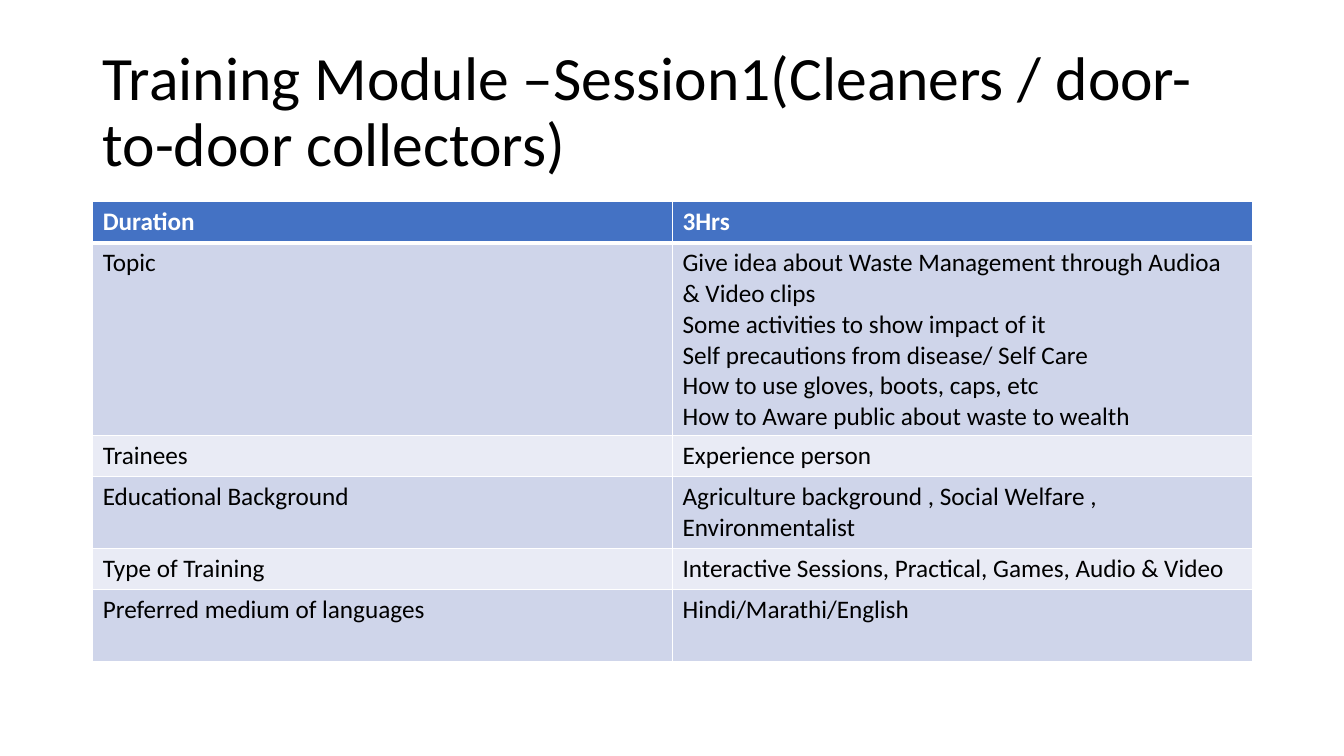
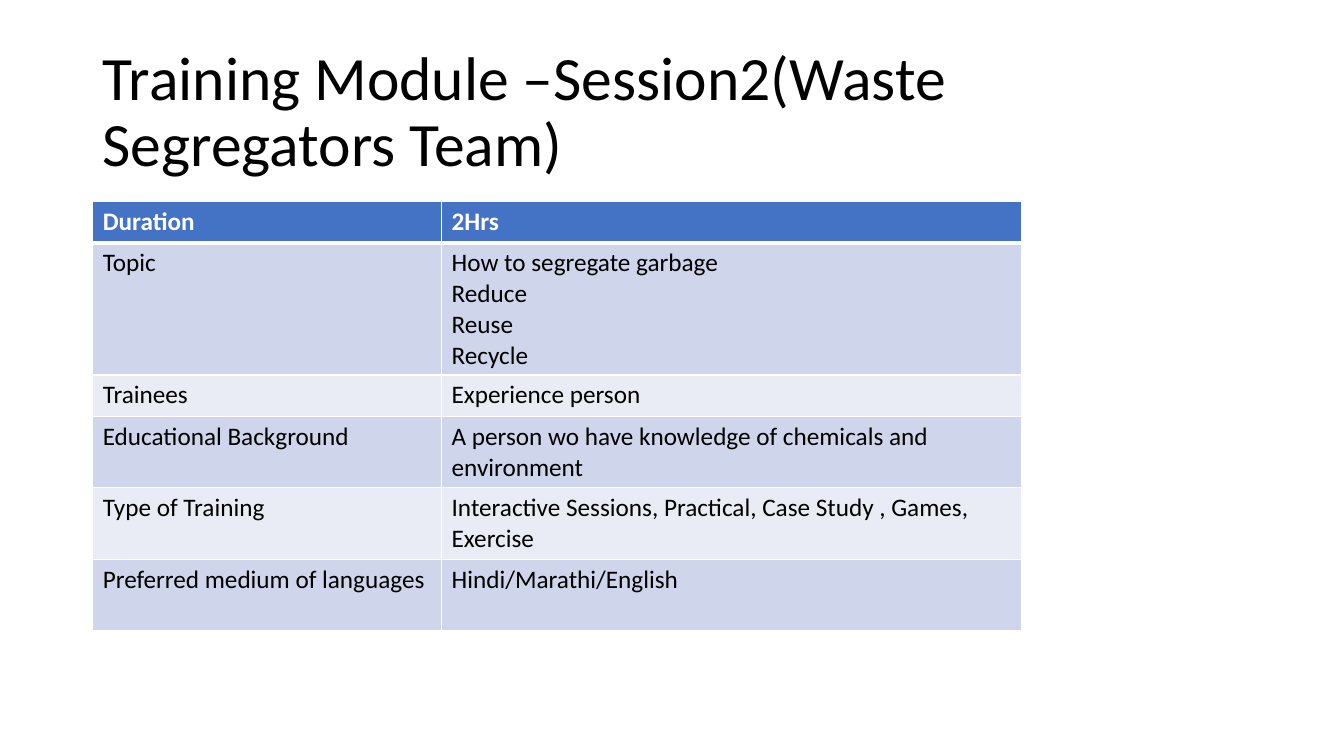
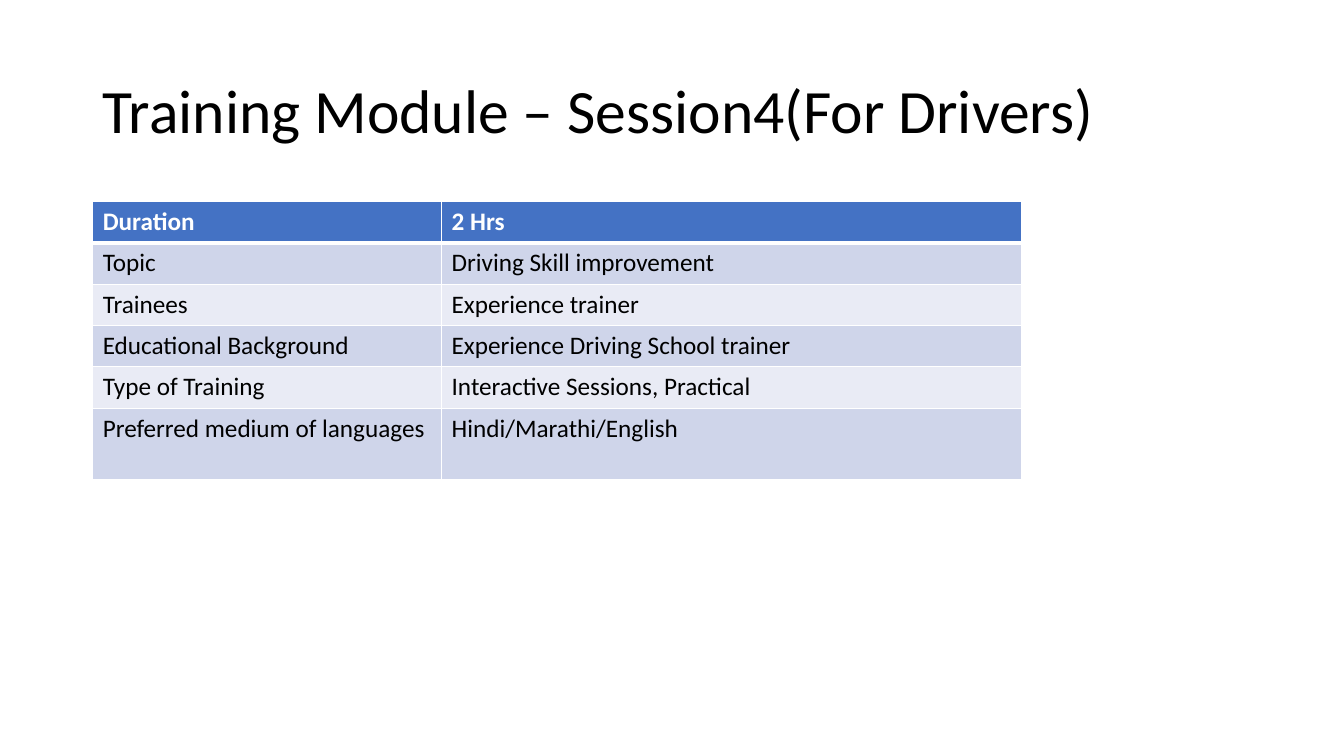
from lxml.etree import SubElement
from pptx import Presentation
from pptx.dml.color import RGBColor
from pptx.enum.text import MSO_ANCHOR as Anchor
from pptx.oxml.ns import qn
from pptx.util import Inches, Pt

# Shared style
FONT = "Calibri"
WHITE, BLACK, BLUE = "FFFFFF", "000000", "4472C4"
BANDS = ("CFD5EA", "E9EBF5")
TITLE_BOX = (0.92, 0.4, 11.5, 1.45)
TABLE_AT = (0.92, 2)
ROW, LINE = 0.41, 0.3
LABELS = ("Duration", "Topic", "Trainees", "Educational Background",
          "Type of Training", "Preferred medium of languages")
TONGUES = "Hindi/Marathi/English"

# Per slide: title, column widths, text lines per row, one value per label
SESSIONS = (
    ("Training Module –Session1(Cleaners / door-to-door collectors)",
     (5.75, 5.75), (1, 6, 1, 2, 1, 2),
     ("3Hrs",
      "Give idea about Waste Management through Audioa & Video clips\n"
      "Some activities to show impact of it\n"
      "Self precautions from disease/ Self Care\n"
      "How to use gloves, boots, caps, etc\n"
      "How to Aware public about waste to wealth",
      "Experience person",
      "Agriculture background , Social Welfare , Environmentalist",
      "Interactive Sessions, Practical, Games, Audio & Video",
      TONGUES)),
    ("Training Module –Session2(Waste Segregators Team)",
     (3.46, 5.75), (1, 4, 1, 2, 2, 2),
     ("2Hrs",
      "How to segregate garbage\nReduce\nReuse\nRecycle",
      "Experience person",
      "A person wo have knowledge of chemicals and environment",
      "Interactive Sessions, Practical, Case Study , Games, Exercise",
      TONGUES)),
    ("Training Module – Session4(For Drivers)",
     (3.46, 5.75), (1, 1, 1, 1, 1, 2),
     ("2 Hrs",
      "Driving Skill improvement",
      "Experience trainer",
      "Experience Driving School trainer",
      "Interactive Sessions, Practical",
      TONGUES)),
)


def color(code):
    return RGBColor.from_string(code)


def write(frame, text, size, ink, bold=False, space=None):
    for i, line in enumerate(text.split("\n")):
        para = frame.add_paragraph() if i else frame.paragraphs[0]
        para.line_spacing = space
        run = para.add_run()
        run.text = line
        font = run.font
        font.name, font.size, font.bold = FONT, Pt(size), bold
        font.color.rgb = color(ink)


def add_title(slide, box, text):
    frame = slide.shapes.add_textbox(*map(Inches, box)).text_frame
    frame.word_wrap = True
    frame.vertical_anchor = Anchor.MIDDLE
    write(frame, text, 44, BLACK, space=0.9)


def set_edges(cell, top, bottom):
    # Borders come before the fill in the cell properties
    props = cell._tc.get_or_add_tcPr()
    widths = (("L", 1), ("R", 1), ("T", top), ("B", bottom))
    for i, (side, width) in enumerate(widths):
        edge = SubElement(props, qn("a:ln" + side), w=str(Pt(width)))
        fill = SubElement(edge, qn("a:solidFill"))
        SubElement(fill, qn("a:srgbClr"), val=WHITE)
        props.insert(i, edge)


def add_grid(slide, at, widths, lines, values):
    heights = [ROW + LINE * (n - 1) for n in lines]
    box = (*at, sum(widths), sum(heights))
    table = slide.shapes.add_table(len(LABELS), len(widths),
                                   *map(Inches, box)).table
    table.first_row = table.horz_banding = False
    for col, width in zip(table.columns, widths):
        col.width = Inches(width)
    for r, texts in enumerate(zip(LABELS, values)):
        head = r == 0
        table.rows[r].height = Inches(heights[r])
        for c, text in enumerate(texts):
            cell = table.cell(r, c)
            cell.fill.solid()
            cell.fill.fore_color.rgb = color(BLUE if head else BANDS[(r - 1) % 2])
            set_edges(cell, 3 if r == 1 else 1, 3 if head else 1)
            write(cell.text_frame, text, 18, WHITE if head else BLACK, head)


def main():
    deck = Presentation()
    deck.slide_width, deck.slide_height = Inches(13.33), Inches(7.5)
    for title, widths, lines, values in SESSIONS:
        slide = deck.slides.add_slide(deck.slide_layouts[6])
        add_title(slide, TITLE_BOX, title)
        add_grid(slide, TABLE_AT, widths, lines, values)
    deck.save("out.pptx")


if __name__ == "__main__":
    main()
